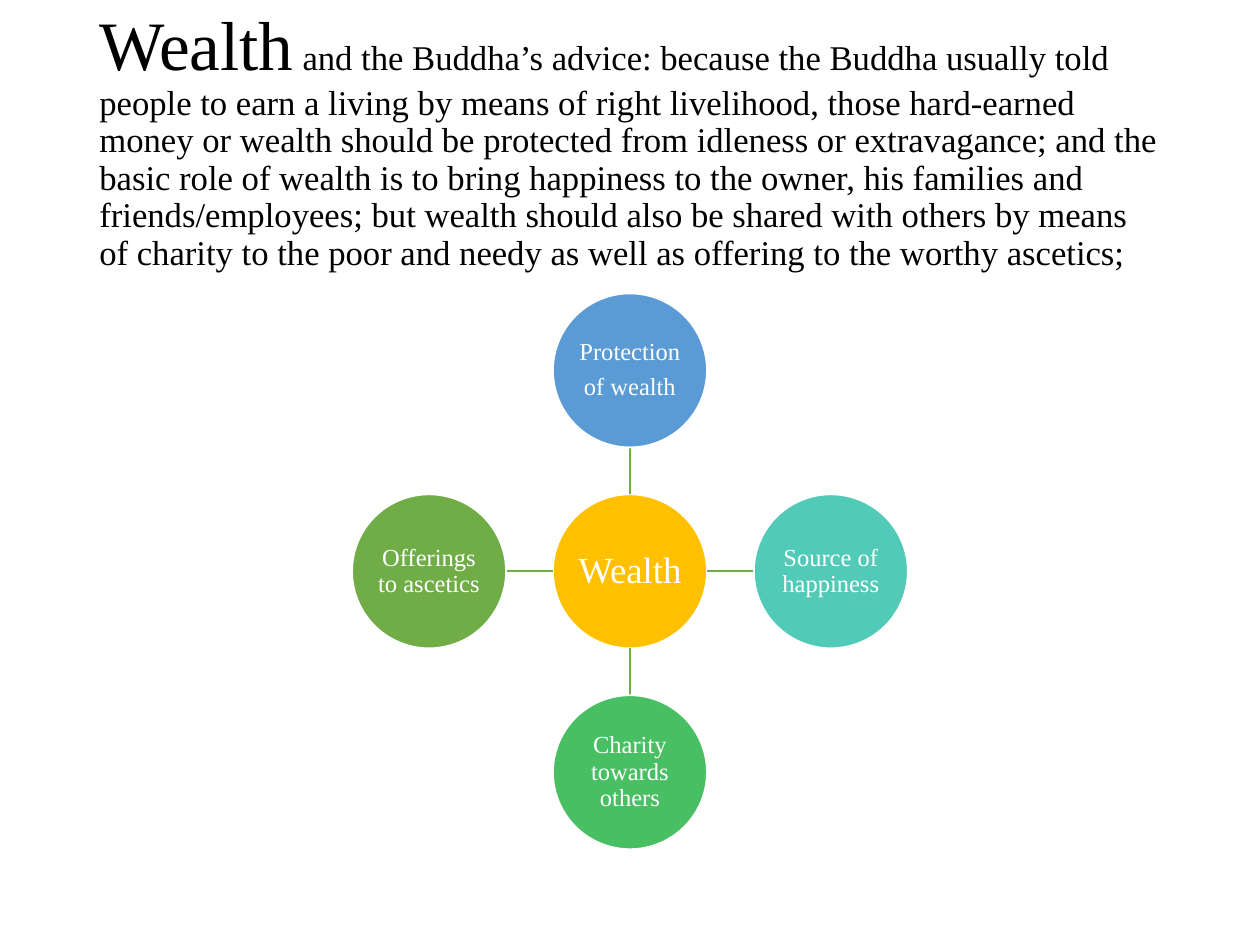
"""Build a slide on wealth with a hub of four linked circles."""
import lxml.etree
import pptx
import pptx.dml.color
import pptx.enum.shapes
import pptx.enum.text
import pptx.oxml.ns
import pptx.util

THEME = {
    "font": "Times New Roman",
    "ink": "000000", "white": "FFFFFF", "link": "70AD47",
    "hub": "FFC000", "top": "5B9BD5", "right": "52CAB8", "bottom": "49BF64", "left": "70AD47",
    "title_size": 39.6, "body_size": 19.8, "hub_size": 21, "node_size": 14,
}


def color(name):
    return pptx.dml.color.RGBColor.from_string(THEME[name])


def add_span(para, text, size, ink):
    span = para.add_run()
    span.text = text
    span.font.name = THEME["font"]
    span.font.size = pptx.util.Pt(THEME[size])
    span.font.color.rgb = color(ink)


deck = pptx.Presentation()
deck.slide_width, deck.slide_height = pptx.util.Pt(720), pptx.util.Pt(540)
page = deck.slides.add_slide(deck.slide_layouts[6])

box = page.shapes.add_textbox(
    pptx.util.Pt(49.7), pptx.util.Pt(28.75), pptx.util.Pt(620.6), pptx.util.Pt(104.4)
)
box.text_frame.word_wrap = True
box.text_frame.vertical_anchor = pptx.enum.text.MSO_ANCHOR.MIDDLE
para = box.text_frame.paragraphs[0]
para.line_spacing = 0.9
add_span(para, "Wealth", "title_size", "ink")
add_span(
    para,
    " and the Buddha’s advice: because the Buddha usually told people to earn a living "
    "by means of right livelihood, those hard-earned money or wealth should be protected "
    "from idleness or extravagance; and the basic role of wealth is to bring happiness to "
    "the owner, his families and friends/employees; but wealth should also be shared with "
    "others by means of charity to the poor and needy as well as offering to the worthy "
    "ascetics;",
    "body_size", "ink",
)

center_x, center_y = 360, 326.5
diameter, pitch = 88, 114.8
radius = diameter / 2
nodes = [
    ("hub", 0, 0, ["Wealth"]),
    ("top", 0, -1, ["Protection", "of wealth"]),
    ("right", 1, 0, ["Source of happiness"]),
    ("bottom", 0, 1, ["Charity towards others"]),
    ("left", -1, 0, ["Offerings to ascetics"]),
]

for name, across, down, lines in nodes:
    if name != "hub":
        reach = pitch - radius
        link = page.shapes.add_connector(
            pptx.enum.shapes.MSO_CONNECTOR.STRAIGHT,
            pptx.util.Pt(center_x + across * radius), pptx.util.Pt(center_y + down * radius),
            pptx.util.Pt(center_x + across * reach), pptx.util.Pt(center_y + down * reach),
        )
        link.line.color.rgb = color("link")
        link.line.width = pptx.util.Pt(1)
        lxml.etree.SubElement(link._element.spPr, pptx.oxml.ns.qn("a:effectLst"))

    circle = page.shapes.add_shape(
        pptx.enum.shapes.MSO_SHAPE.OVAL,
        pptx.util.Pt(center_x + across * pitch - radius),
        pptx.util.Pt(center_y + down * pitch - radius),
        pptx.util.Pt(diameter), pptx.util.Pt(diameter),
    )
    circle.shadow.inherit = False
    circle.fill.solid()
    circle.fill.fore_color.rgb = color(name)
    circle.line.color.rgb = color("white")
    circle.line.width = pptx.util.Pt(1)
    frame = circle.text_frame
    frame.word_wrap = True
    frame.vertical_anchor = pptx.enum.text.MSO_ANCHOR.MIDDLE
    frame.margin_left = frame.margin_right = pptx.util.Pt(0.7)
    frame.margin_top = frame.margin_bottom = pptx.util.Pt(0.7)
    size = "hub_size" if name == "hub" else "node_size"
    for index, line in enumerate(lines):
        para = frame.add_paragraph() if index else frame.paragraphs[0]
        para.alignment = pptx.enum.text.PP_ALIGN.CENTER
        para.line_spacing = 0.9
        para.space_after = pptx.util.Pt(0.35 * THEME[size])
        add_span(para, line, size, "white")

deck.save("out.pptx")
